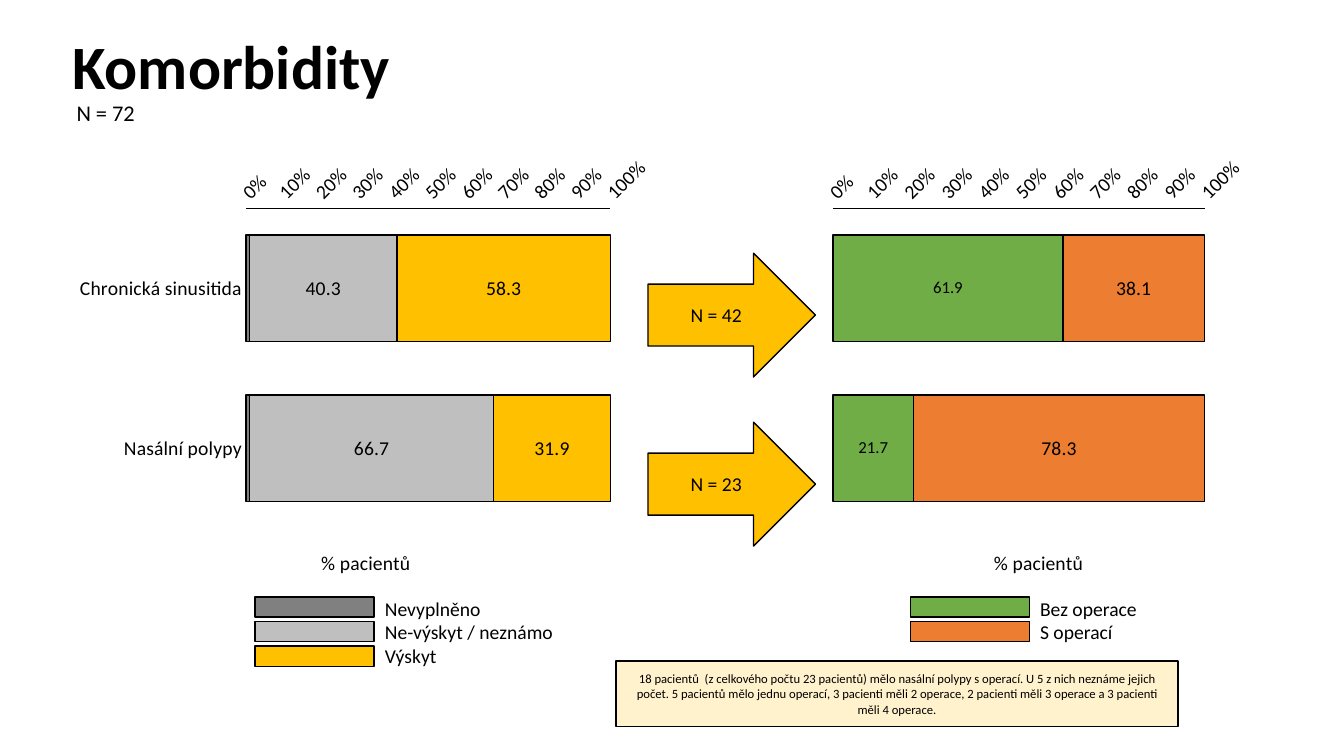
import pptx
import pptx.util
import pptx.chart.data
import pptx.dml.color
import pptx.enum.chart
import pptx.enum.shapes
import pptx.enum.text
import pptx.oxml

COLORS = {
    "black": "000000",
    "unfilled": "808080",
    "absent": "BFBFBF",
    "present": "FFC000",
    "no_surgery": "70AD47",
    "surgery": "ED7D31",
    "note": "FFF2CC",
}
DIAGNOSES = ["Chronická sinusitida", "Nasální polypy"]
CHART_TOP, CHART_HEIGHT = 3.68, 11.2


class Deck:
    font = "Calibri"
    left = pptx.enum.text.PP_ALIGN.LEFT
    center = pptx.enum.text.PP_ALIGN.CENTER

    def __init__(self):
        self.presentation = pptx.Presentation()
        self.presentation.slide_width = pptx.util.Cm(33.87)
        self.presentation.slide_height = pptx.util.Cm(19.05)
        self.slide = self.presentation.slides.add_slide(self.presentation.slide_layouts[6])

    def color(self, name):
        return pptx.dml.color.RGBColor.from_string(COLORS[name])

    def box(self, *lengths):
        return [pptx.util.Cm(length) for length in lengths]

    def style_font(self, font, size, bold=False):
        font.name = self.font
        font.size = pptx.util.Pt(size)
        font.bold = bold
        font.color.rgb = self.color("black")

    def paint(self, part_format, fill):
        part_format.fill.solid()
        part_format.fill.fore_color.rgb = self.color(fill)
        part_format.line.color.rgb = self.color("black")
        part_format.line.width = pptx.util.Pt(1)

    def set_wording(self, frame, wording, size, align, bold=False):
        frame.text = wording
        frame.word_wrap = True
        frame.vertical_anchor = pptx.enum.text.MSO_ANCHOR.MIDDLE
        for paragraph in frame.paragraphs:
            paragraph.alignment = align
            for run in paragraph.runs:
                self.style_font(run.font, size, bold)

    def text(self, wording, bounds, size, bold=False):
        label = self.slide.shapes.add_textbox(*self.box(*bounds))
        self.set_wording(label.text_frame, wording, size, self.left, bold)
        return label

    def shape(self, kind, bounds, fill, wording="", size=14):
        figure = self.slide.shapes.add_shape(kind, *self.box(*bounds))
        figure.shadow.inherit = False
        self.paint(figure, fill)
        if wording:
            self.set_wording(figure.text_frame, wording, size, self.center)

    def place(self, parent, position, x, y, size=None):
        target = '<c:layoutTarget val="inner"/>' if size else ""
        extent = '<c:w val="%s"/><c:h val="%s"/>' % size if size else ""
        layout = pptx.oxml.parse_xml(
            '<c:layout xmlns:c="http://schemas.openxmlformats.org/drawingml/2006/chart">'
            f'<c:manualLayout>{target}<c:xMode val="edge"/><c:yMode val="edge"/>'
            f'<c:x val="{x}"/><c:y val="{y}"/>{extent}</c:manualLayout></c:layout>')
        for former in parent.findall(layout.tag):
            parent.remove(former)
        parent.insert(position, layout)

    def bars(self, left, width, series, plot_x, plot_width, title_x, show_diagnoses):
        shares = pptx.chart.data.CategoryChartData(number_format="0.0")
        shares.categories = DIAGNOSES
        for name, values, fill, label_size in series:
            shares.add_series(name, values)
        chart = self.slide.shapes.add_chart(
            pptx.enum.chart.XL_CHART_TYPE.BAR_STACKED_100,
            *self.box(left, CHART_TOP, width, CHART_HEIGHT), shares).chart
        self.style_font(chart.font, 12)
        chart.has_legend = False
        chart.has_title = False
        plot = chart.plots[0]
        plot.gap_width = 50
        plot.overlap = 100
        plot.vary_by_categories = False
        self.place(chart._chartSpace.chart.plotArea, 0, plot_x, 0.14, (plot_width, 0.72))

        for bar, (name, values, fill, label_size) in zip(plot.series, series):
            self.paint(bar.format, fill)
            if label_size:
                labels = bar.data_labels
                labels.show_value = True
                labels.number_format = "###0.0"
                labels.number_format_is_linked = False
                self.style_font(labels.font, label_size)

        diagnoses = chart.category_axis
        diagnoses.reverse_order = True
        diagnoses.visible = show_diagnoses
        diagnoses.format.line.fill.background()
        percent = chart.value_axis
        percent.has_major_gridlines = False
        percent.major_unit = 0.1
        percent.format.line.color.rgb = self.color("black")
        percent.format.line.width = pptx.util.Pt(1)
        for axis in (diagnoses, percent):
            axis.major_tick_mark = pptx.enum.chart.XL_TICK_MARK.NONE
            self.style_font(axis.tick_labels.font, 14)
        percent.tick_labels.number_format = "0%"
        percent.tick_labels.number_format_is_linked = False
        percent._element.txPr.bodyPr.set("rot", "-2700000")
        caption = percent.axis_title
        self.set_wording(caption.text_frame, "% pacientů", 14, self.center)
        self.place(caption._element, 1, title_x, 0.9)

    def legend(self, left, series):
        self.text("\n".join(name for name, *rest in series),
                  (left + 3.02, 14.73, 5.16, 0.59 + 0.6 * len(series)), 14)
        for row, (name, values, fill, label_size) in enumerate(series):
            self.shape(pptx.enum.shapes.MSO_SHAPE.RECTANGLE,
                       (left, 15.04 + 0.62 * row, 3, 0.51), fill)


def main():
    occurrence = [
        ("Nevyplněno", (1, 1), "unfilled", None),
        ("Ne-výskyt / neznámo", (40.3, 66.7), "absent", 14),
        ("Výskyt", (58.3, 31.9), "present", 14),
    ]
    surgery = [
        ("Bez operace", (61.9, 21.7), "no_surgery", 12),
        ("S operací", (38.1, 78.3), "surgery", 14),
    ]
    deck = Deck()
    heading = deck.text("Komorbidity", (1.57, 0.51, 30.71, 2.49), 44, True)
    heading.text_frame.paragraphs[0].line_spacing = 0.9
    deck.bars(1.68, 15.06, occurrence, 0.3, 0.61, 0.42, True)
    deck.legend(6.43, occurrence)
    for top, patients in ((6.38, "N = 42"), (10.64, "N = 23")):
        deck.shape(pptx.enum.shapes.MSO_SHAPE.RIGHT_ARROW,
                   (16.33, top, 4.22, 3.12), "present", patients)
    deck.bars(20.55, 11.02, surgery, 0.04, 0.85, 0.4, False)
    deck.legend(22.94, surgery)
    deck.shape(
        pptx.enum.shapes.MSO_SHAPE.RECTANGLE, (15.52, 16.66, 14.17, 1.65), "note",
        "18 pacientů  (z celkového počtu 23 pacientů) mělo nasální polypy s operací. "
        "U 5 z nich neznáme jejich počet. 5 pacientů mělo jednu operací, "
        "3 pacienti měli 2 operace, 2 pacienti měli 3 operace a 3 pacienti měli 4 operace.", 9)
    deck.text("N = 72", (1.68, 2.29, 2.54, 1.07), 16)
    deck.presentation.save("out.pptx")


if __name__ == "__main__":
    main()
